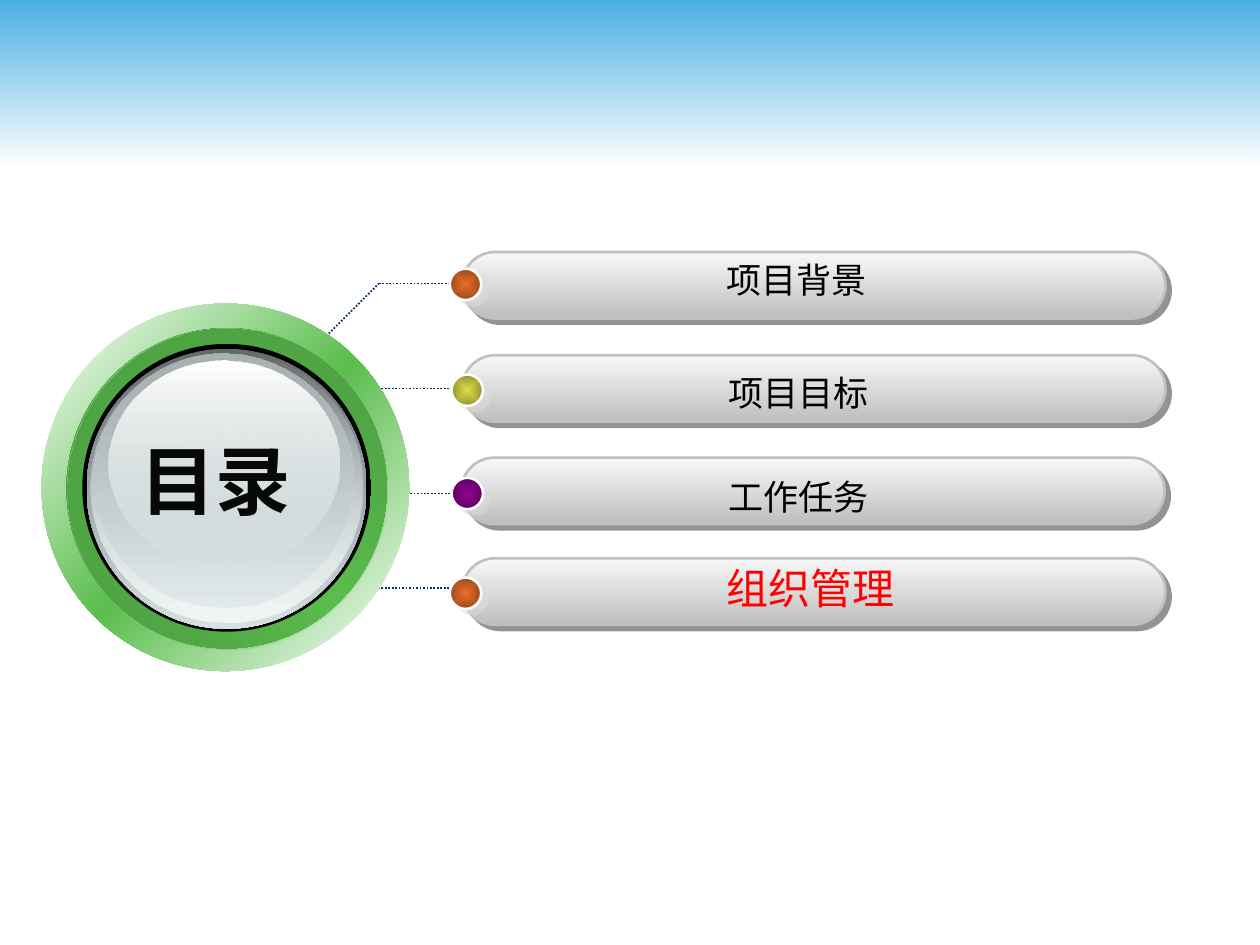
from lxml import etree
from pptx import Presentation
from pptx.dml.color import RGBColor
from pptx.enum.dml import MSO_LINE
from pptx.enum.shapes import MSO_CONNECTOR, MSO_SHAPE
from pptx.enum.text import MSO_ANCHOR, MSO_AUTO_SIZE, PP_ALIGN
from pptx.oxml import parse_xml
from pptx.oxml.ns import nsdecls, qn
from pptx.util import Pt

OVAL, PILL, RECTANGLE = MSO_SHAPE.OVAL, MSO_SHAPE.ROUNDED_RECTANGLE, MSO_SHAPE.RECTANGLE
FONT = "Noto Sans CJK SC"
COLORS = {
    "sky": "4AB1E4", "white": "FFFFFF", "black": "000000", "red": "FF0000",
    "title": "080808", "navy": "003366", "border": "C0C0C0",
    "bar_top": "F8F8F8", "bar_bottom": "BEBEBE",
    "bar_shadow": "292929", "dot_shadow": "DDDDDD",
    "green": "5BBE4E", "dark_green": "46913C", "mid_green": "4B9C40",
    "slate": "636869", "mist": "D6E1E2", "pale": "F1F5F5", "steel": "AAB2B3",
    "orange": "E96E29", "rust": "9B491B", "yellow": "DCDC48", "olive": "939330",
    "purple": "8F038F", "plum": "5F025F",
}

# text, size, colour, bar left, bar top, text left, text top, dot left, dot top, dot colours
ITEMS = [
    ("项目背景", 20, "black", 264, 144, 408, 144, 257, 153.5, ("orange", "rust")),
    ("项目目标", 20, "black", 264, 203, 409, 209, 258, 214, ("yellow", "olive")),
    ("工作任务", 20, "black", 263.5, 261.5, 409, 268, 258, 273, ("purple", "plum")),
    ("组织管理", 24, "red", 264, 319, 408, 318, 257, 330, ("orange", "rust")),
]
BAR_WIDTH, BAR_HEIGHT, DOT_SIZE = 402, 38, 18

# left, top, width, height, gradient stops (position, colour, opacity), angle
RINGS = [
    (23.8, 173.5, 210, 210, [(0, "white", 100), (50, "green", 100), (100, "white", 100)], 45),
    (38, 187.5, 183, 183,
     [(0, "dark_green", 100), (50, "green", 100), (100, "dark_green", 100)], 315),
    (38.7, 188, 183, 183, [(0, "mid_green", 100), (100, "green", 0)], 45),
    (47, 196.5, 165, 164.5, [(0, "black", 100), (100, "black", 100)], 0),
    (49.5, 199.3, 160, 160, [(0, "slate", 100), (100, "mist", 100)], 90),
    (51.5, 200.5, 155.5, 155.5, [(0, "mist", 0), (100, "pale", 100)], 90),
    (53.5, 201.8, 148.5, 145.5, [(0, "steel", 100), (100, "mist", 48)], 90),
    (61.8, 205.8, 132, 118, [(0, "white", 100), (100, "mist", 38)], 90),
]

# start x, start y, end x, end y
LEADERS = [
    (186.5, 192, 216.5, 162),
    (216.5, 162, 264, 162),
    (210, 222, 264, 222),
    (216.5, 282, 264, 282),
    (210, 336, 264, 336),
]


def rgb(name):
    return RGBColor.from_string(COLORS[name])


def set_gradient(shape, stops, angle):
    """Fill with a linear gradient, or a centred one when angle is None."""
    stop_xml = "".join(
        f'<a:gs pos="{position * 1000}"><a:srgbClr val="{COLORS[color]}">'
        f'<a:alpha val="{opacity * 1000}"/></a:srgbClr></a:gs>'
        for position, color, opacity in stops)
    if angle is None:
        direction = ('<a:path path="shape"><a:fillToRect l="50000" t="50000" '
                     'r="50000" b="50000"/></a:path>')
    else:
        direction = f'<a:lin ang="{angle * 60000}" scaled="0"/>'
    gradient = parse_xml(f'<a:gradFill {nsdecls("a")} rotWithShape="1">'
                         f'<a:gsLst>{stop_xml}</a:gsLst>{direction}</a:gradFill>')
    shape.fill.background()
    properties = shape._element.spPr
    properties.replace(properties.find(qn("a:noFill")), gradient)


def add_gradient_shape(shapes, kind, box, stops, angle, border=None):
    shape = shapes.add_shape(kind, *map(Pt, box))
    shape.shadow.inherit = False
    set_gradient(shape, stops, angle)
    if border:
        shape.line.color.rgb = rgb(border)
        shape.line.width = Pt(1.5)
    else:
        shape.line.fill.background()
    return shape


def set_shadow(shape, color, distance, angle):
    effects = shape._element.spPr.find(qn("a:effectLst"))
    effects.append(parse_xml(
        f'<a:outerShdw {nsdecls("a")} blurRad="0" dist="{Pt(distance)}" '
        f'dir="{angle * 60000}" algn="ctr" rotWithShape="0">'
        f'<a:srgbClr val="{COLORS[color]}"><a:alpha val="50000"/></a:srgbClr></a:outerShdw>'))


def add_text(shapes, box, text, size, color, bold=False):
    shape = shapes.add_textbox(*map(Pt, box))
    frame = shape.text_frame
    frame.text = text
    frame.word_wrap = False
    run = frame.paragraphs[0].runs[0]
    run.font.size = Pt(size)
    run.font.bold = bold
    run.font.color.rgb = rgb(color)
    run.font.name = FONT
    etree.SubElement(run._r.get_or_add_rPr(), qn("a:ea")).set("typeface", FONT)
    return frame


def add_leader(shapes, points):
    connector = shapes.add_connector(MSO_CONNECTOR.STRAIGHT, *map(Pt, points))
    connector.line.color.rgb = rgb("navy")
    connector.line.width = Pt(1)
    connector.line.dash_style = MSO_LINE.ROUND_DOT
    etree.SubElement(connector._element.spPr, qn("a:effectLst"))
    return connector


def add_item(shapes, item):
    text, size, color, bar_left, bar_top, text_left, text_top, dot_left, dot_top, dot = item
    bar = add_gradient_shape(shapes, PILL, (bar_left, bar_top, BAR_WIDTH, BAR_HEIGHT),
                             [(0, "bar_top", 100), (100, "bar_bottom", 100)], 90, "border")
    bar.adjustments[0] = 0.5
    set_shadow(bar, "bar_shadow", 4.2, 45)

    frame = add_text(shapes, (text_left, text_top, 4 * size + 15, 1.25 * size + 7),
                     text, size, color)
    frame.auto_size = MSO_AUTO_SIZE.SHAPE_TO_FIT_TEXT

    inner, outer = dot
    marker = add_gradient_shape(shapes, OVAL, (dot_left, dot_top, DOT_SIZE, DOT_SIZE),
                                [(0, inner, 100), (100, outer, 100)], None, "white")
    set_shadow(marker, "dot_shadow", 5, 37)
    return bar


def main():
    presentation = Presentation()
    presentation.slide_width, presentation.slide_height = Pt(720), Pt(540)
    shapes = presentation.slides.add_slide(presentation.slide_layouts[6]).shapes

    add_gradient_shape(shapes, RECTANGLE, (0, 0, 720, 96),
                       [(0, "sky", 100), (100, "white", 100)], 90)
    leaders = [add_leader(shapes, points) for points in LEADERS]
    for *box, stops, angle in RINGS:
        add_gradient_shape(shapes, OVAL, box, stops, angle)
    bars = [add_item(shapes, item) for item in ITEMS]
    leaders[2].end_connect(bars[1], 1)

    title = add_text(shapes, (60, 240, 126, 68), "目录", 43, "title", bold=True)
    title.word_wrap = True
    title.vertical_anchor = MSO_ANCHOR.MIDDLE
    title.paragraphs[0].alignment = PP_ALIGN.CENTER

    presentation.save("out.pptx")


if __name__ == "__main__":
    main()
